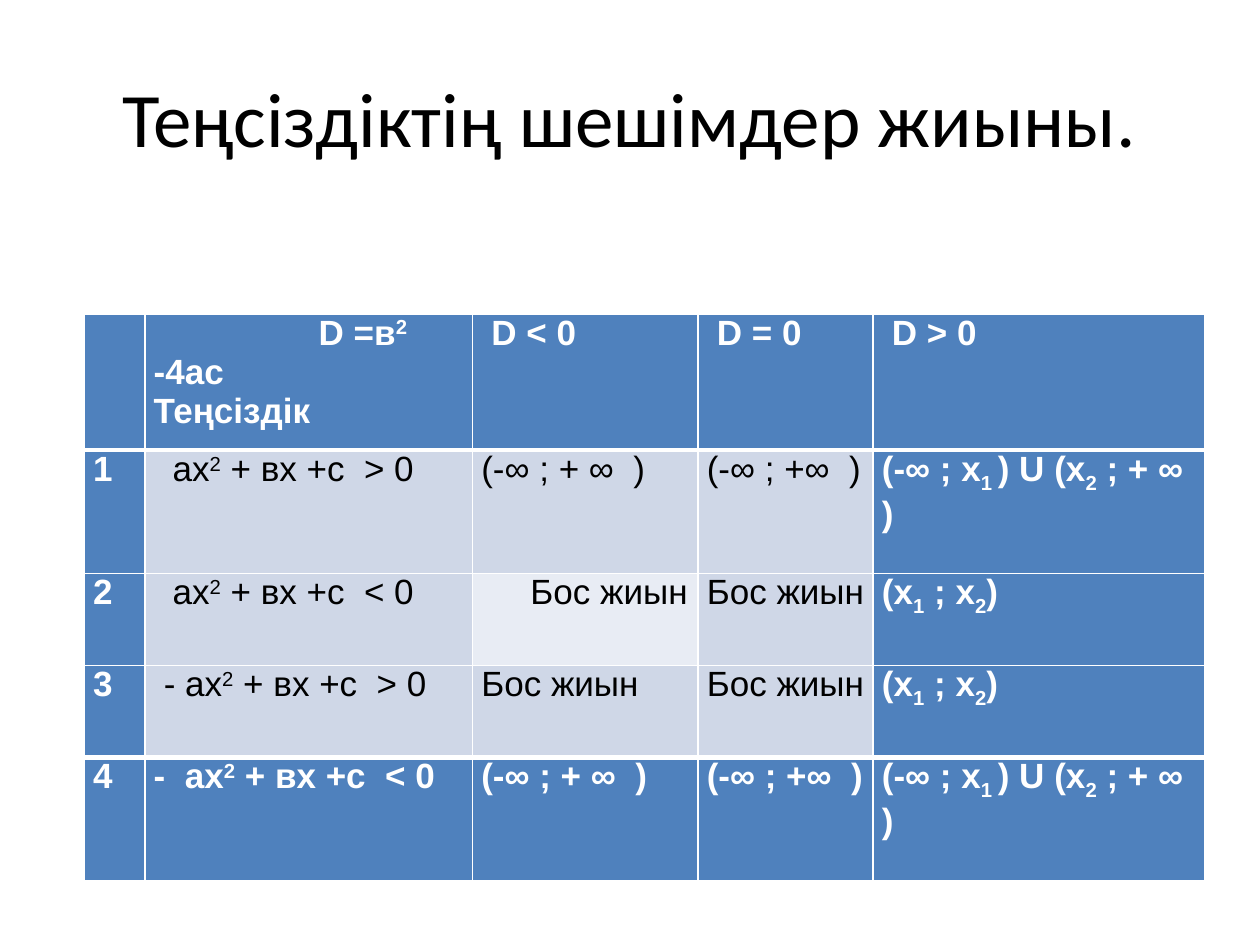
"""Builds a slide with the solution sets of quadratic inequalities."""
import dataclasses

import lxml.etree
import pptx
import pptx.dml.color
import pptx.enum.text
import pptx.oxml.ns
import pptx.util

Inches = pptx.util.Inches
Pt = pptx.util.Pt
Align = pptx.enum.text.PP_ALIGN
Anchor = pptx.enum.text.MSO_ANCHOR


@dataclasses.dataclass(frozen=True)
class Theme:
    title_font: str = "Calibri"
    table_font: str = "Arial"
    title_size: int = 44
    table_size: int = 20
    ink: str = "000000"
    paper: str = "FFFFFF"
    strong: str = "4F81BD"
    band: str = "CFD7E7"
    pale: str = "E8ECF4"
    thin: int = 1
    thick: int = 3


BASELINES = {"^": "30000", "_": "-25000"}
COLUMNS = [0.48, 2.6, 1.79, 1.39, 2.63]
ROWS = [1.08, 0.98, 0.73, 0.73, 0.98]
OUTSIDE = "(-∞ ; х|_1 |) U (х|_2| ; + ∞  )"
BETWEEN = "(х|_1| ; х|_2|)"
EMPTY = "Бос жиын"
CELLS = [
    ["", "D =в|^2| -4ас\nТеңсіздік", "D < 0", "D = 0", "D > 0"],
    ["1", "ах|^2| + вх +с  > 0", "(-∞ ; + ∞  )", "(-∞ ; +∞  )", OUTSIDE],
    ["2", "ах|^2| + вх +с  < 0", EMPTY, EMPTY, BETWEEN],
    ["3", "- ах|^2| + вх +с  > 0", EMPTY, EMPTY, BETWEEN],
    ["4", "-  ах|^2| + вх +с  < 0", "(-∞ ; + ∞  )", "(-∞ ; +∞  )", OUTSIDE],
]
INDENTS = {(0, 1): 1.31, (0, 2): 0.08, (0, 3): 0.08, (0, 4): 0.08,
           (1, 1): 0.15, (2, 1): 0.15, (2, 2): 0.39, (3, 1): 0.08}


def write(frame, text, *, font, size, color, bold=False, align=Align.LEFT, indent=0):
    """Fill a text frame; | parts spans, ^ raises and _ lowers one."""
    for number, line in enumerate(text.split("\n")):
        para = frame.add_paragraph() if number else frame.paragraphs[0]
        para.alignment = align
        if indent and number == 0:
            properties = para._p.get_or_add_pPr()
            properties.set("marL", "0")
            properties.set("indent", str(Inches(indent)))
        for part in filter(None, line.split("|")):
            span = para.add_run()
            span.text = part.lstrip("^_")
            span.font.name = font
            span.font.size = Pt(size)
            span.font.bold = bold
            span.font.color.rgb = pptx.dml.color.RGBColor.from_string(color)
            if part[0] in BASELINES:
                span._r.get_or_add_rPr().set("baseline", BASELINES[part[0]])


class SlideBuilder:
    """Holds the theme and the current page."""

    def __init__(self, deck, theme):
        self.theme = theme
        self.page = deck.slides.add_slide(deck.slide_layouts[5])

    def title(self, text, left, top, width, height):
        """Place and format the title placeholder."""
        box = self.page.shapes.title
        box.left, box.top = Inches(left), Inches(top)
        box.width, box.height = Inches(width), Inches(height)
        box.text_frame.vertical_anchor = Anchor.MIDDLE
        write(box.text_frame, text, font=self.theme.title_font,
              size=self.theme.title_size, color=self.theme.ink, align=Align.CENTER)

    def border(self, cell, side, width):
        """Draw one side of a cell."""
        qn = pptx.oxml.ns.qn
        line = lxml.etree.SubElement(cell._tc.get_or_add_tcPr(), qn(f"a:ln{side}"),
                                     w=str(Pt(width)))
        fill = lxml.etree.SubElement(line, qn("a:solidFill"))
        lxml.etree.SubElement(fill, qn("a:srgbClr"), val=self.theme.paper)

    def cell(self, cell, text, fill, indent, top, bottom):
        """Format one table cell."""
        theme = self.theme
        strong = fill == theme.strong
        cell.margin_left = cell.margin_right = Inches(0.07)
        cell.margin_top = cell.margin_bottom = 0
        for side, width in zip("LRTB", (theme.thin, theme.thin, top, bottom)):
            self.border(cell, side, width)
        cell.fill.solid()
        cell.fill.fore_color.rgb = pptx.dml.color.RGBColor.from_string(fill)
        write(cell.text_frame, text, font=theme.table_font, size=theme.table_size,
              color=theme.paper if strong else theme.ink, bold=strong, indent=indent)

    def table(self, cells, left, top, columns, rows):
        """Add the table with strong outer cells and a light middle."""
        theme = self.theme
        last_row, last_column = len(rows) - 1, len(columns) - 1
        table = self.page.shapes.add_table(
            len(rows), len(columns), Inches(left), Inches(top),
            Inches(sum(columns)), Inches(sum(rows))).table
        for column, width in zip(table.columns, columns):
            column.width = Inches(width)
        for row, height in zip(table.rows, rows):
            row.height = Inches(height)
        for r, texts in enumerate(cells):
            for c, text in enumerate(texts):
                if r in (0, last_row) or c in (0, last_column):
                    fill = theme.strong
                else:
                    fill = theme.pale if (r, c) == (2, 2) else theme.band
                above = theme.thick if r in (1, last_row) else theme.thin
                below = theme.thick if r in (0, last_row - 1) else theme.thin
                self.cell(table.cell(r, c), text, fill, INDENTS.get((r, c), 0),
                          above, below)


def main():
    """Build and save the deck."""
    deck = pptx.Presentation()
    deck.slide_width, deck.slide_height = Inches(10), Inches(7.5)
    builder = SlideBuilder(deck, Theme())
    builder.title("Теңсіздіктің шешімдер жиыны.", 0.5, 0.3, 9, 1.25)
    builder.table(CELLS, 0.67, 2.49, COLUMNS, ROWS)
    deck.save("out.pptx")


if __name__ == "__main__":
    main()
